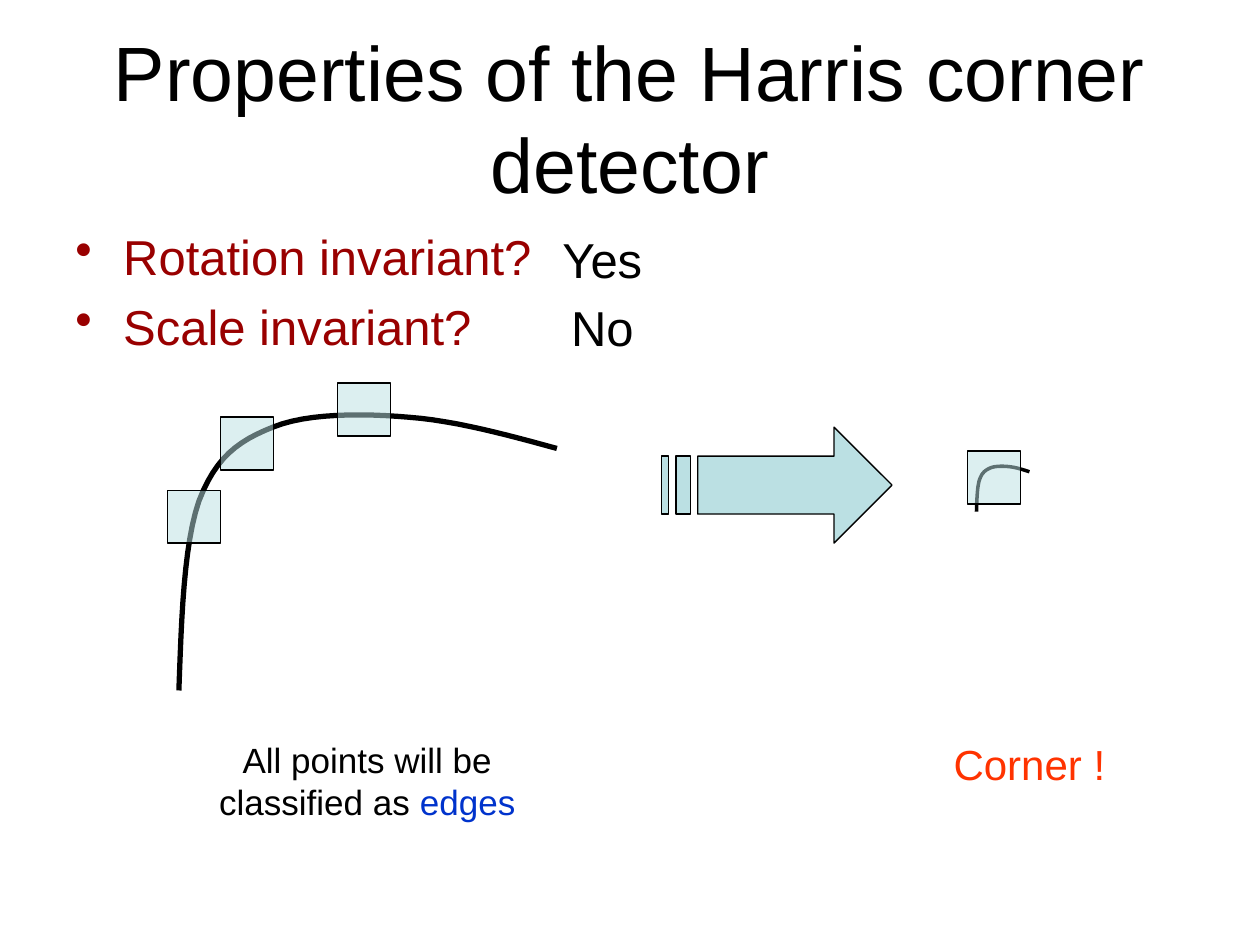
from dataclasses import dataclass

from lxml.etree import SubElement
from pptx import Presentation
from pptx.dml.color import RGBColor
from pptx.enum.shapes import MSO_SHAPE
from pptx.enum.text import MSO_ANCHOR, PP_ALIGN
from pptx.oxml.ns import qn
from pptx.util import Inches, Pt


@dataclass(frozen=True)
class Theme:
    font: str = "Arial"
    ink: str = "000000"
    ask: str = "990000"
    edge: str = "0033CC"
    corner: str = "FF3300"
    fill: str = "BBE0E3"
    title: int = 44
    body: int = 28
    label: int = 24
    note: int = 20
    thin: float = 0.75


T = Theme()

TITLE = "Properties of the Harris corner detector"
ASKS = ["Rotation invariant?", "Scale invariant?"]
REPLIES = [("Yes", 1.77), ("No", 2.31)]
NOTE = [("All points will be classified as ", T.ink), ("edges", T.edge)]
LABEL = [("Corner !", T.corner)]

# Bezier curve on a unit square: start, then (control, control, end)
START = (0, 1)
ARCS = [
    ((0.007, 0.736), (0.013, 0.473), (0.053, 0.314)),
    ((0.097, 0.155), (0.157, 0.095), (0.25, 0.045)),
    ((0.34, -0.005), (0.487, -0.005), (0.61, 0.01)),
    ((0.733, 0.023), (0.867, 0.073), (1, 0.123)),
]
LARGE = (1.42, 3.29, 3, 2.19)
SMALL = (7.75, 3.7, 0.42, 0.36)
WINDOW = 0.42
SPOTS = [(1.33, 3.89), (1.75, 3.31), (2.68, 3.04)]
SPOT = (7.68, 3.58)
ARROW = (5.25, 3.39, 1.83, 0.92)


def rgb(code):
    return RGBColor.from_string(code)


def add_text(shapes, box, lines, size, align=PP_ALIGN.CENTER):
    """Each line is a list of (text, colour) runs."""
    frame = shapes.add_textbox(*map(Inches, box)).text_frame
    frame.word_wrap = True
    for i, runs in enumerate(lines):
        para = frame.paragraphs[0] if i == 0 else frame.add_paragraph()
        para.alignment = align
        for text, color in runs:
            run = para.add_run()
            run.text = text
            run.font.color.rgb = rgb(color)
        para.font.name = T.font
        para.font.size = Pt(size)
    return frame


def add_bullet(para):
    props = para._p.get_or_add_pPr()
    props.set("marL", str(Inches(0.38)))
    props.set("indent", str(-Inches(0.38)))
    mark = SubElement(props, qn("a:buChar"))
    mark.set("char", "•")


def outline(shape, width):
    shape.shadow.inherit = False
    shape.line.color.rgb = rgb(T.ink)
    shape.line.width = Pt(width)


def paint(shape):
    shape.fill.solid()
    shape.fill.fore_color.rgb = rgb(T.fill)
    outline(shape, T.thin)


def add_curve(shapes, box, width, steps=12):
    left, top, wide, high = box
    unit, begin = [START], START
    for one, two, end in ARCS:
        for i in range(1, steps + 1):
            t = i / steps
            parts = ((1 - t) ** 3, 3 * t * (1 - t) ** 2, 3 * t * t * (1 - t), t ** 3)
            ends = (begin, one, two, end)
            unit.append(tuple(sum(k * p[a] for k, p in zip(parts, ends)) for a in (0, 1)))
        begin = end
    points = [(Inches(left + x * wide), Inches(top + y * high)) for x, y in unit]
    pen = shapes.build_freeform(*points[0])
    pen.add_line_segments(points[1:], close=False)
    curve = pen.convert_to_shape()
    curve.fill.background()
    outline(curve, width)


def add_window(shapes, spot):
    box = shapes.add_shape(MSO_SHAPE.RECTANGLE, *map(Inches, (*spot, WINDOW, WINDOW)))
    paint(box)
    color = box._element.spPr.find(qn("a:solidFill"))[0]
    SubElement(color, qn("a:alpha")).set("val", "50000")


def add_arrow(shapes, box):
    """Arrow with two stripes at its tail, all parts set by its height."""
    left, top, wide, high = box
    neck, tip = wide / high - 0.5, wide / high

    def bar(a, b):
        return [(a, 0.25), (a, 0.75), (b, 0.75), (b, 0.25)]

    body = [(neck, 0), (neck, 0.25), (5 / 16, 0.25), (5 / 16, 0.75),
            (neck, 0.75), (neck, 1), (tip, 0.5)]
    pen = None
    for part in (body, bar(1 / 8, 1 / 4), bar(0, 1 / 16)):
        points = [(Inches(left + x * high), Inches(top + y * high)) for x, y in part]
        if pen is None:
            pen = shapes.build_freeform(*points[0])
        else:
            pen.move_to(*points[0])
        pen.add_line_segments(points[1:], close=True)
    paint(pen.convert_to_shape())


def main():
    deck = Presentation()
    deck.slide_width, deck.slide_height = Inches(10), Inches(7.5)
    shapes = deck.slides.add_slide(deck.slide_layouts[6]).shapes

    title = add_text(shapes, (0.5, 0.3, 9, 1.25), [[(TITLE, T.ink)]], T.title)
    title.vertical_anchor = MSO_ANCHOR.MIDDLE

    lines = [[(ask, T.ask)] for ask in ASKS]
    body = add_text(shapes, (0.5, 1.75, 9, 4.95), lines, T.body, PP_ALIGN.LEFT)
    for i, para in enumerate(body.paragraphs):
        if i:
            para.space_before = Pt(6.5)
        # The bullet must come before the font in the paragraph properties
        size = para.font.size
        props = para._p.get_or_add_pPr()
        font = props.find(qn("a:defRPr"))
        props.remove(font)
        add_bullet(para)
        props.append(font)
        para.font.size = size

    edges = shapes.add_group_shape().shapes
    add_curve(edges, LARGE, 3)
    for spot in SPOTS:
        add_window(edges, spot)
    add_text(edges, (1.5, 5.81, 2.83, 0.77), [NOTE], T.note)

    corner = shapes.add_group_shape().shapes
    add_curve(corner, SMALL, 2)
    add_window(corner, SPOT)
    add_arrow(corner, ARROW)
    add_text(corner, (7.42, 5.81, 1.5, 0.5), [LABEL], T.label)

    for reply, top in REPLIES:
        add_text(shapes, (3.74, top, 2.08, 0.57), [[(reply, T.ink)]], T.body)

    deck.save("out.pptx")


if __name__ == "__main__":
    main()
